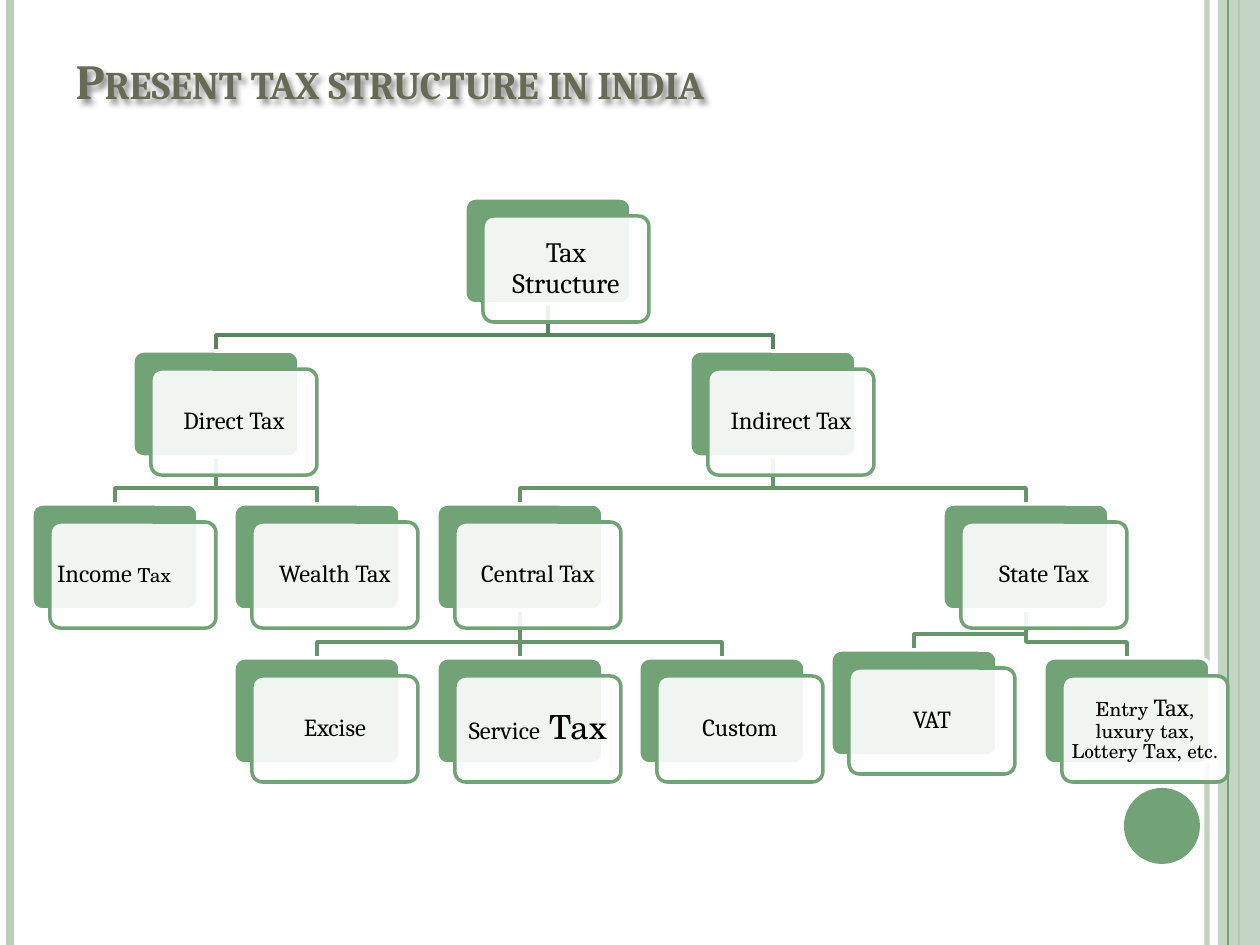
from dataclasses import dataclass

from lxml.etree import SubElement
from pptx import Presentation
from pptx.dml.color import RGBColor
from pptx.enum.shapes import MSO_CONNECTOR, MSO_SHAPE
from pptx.enum.text import MSO_ANCHOR, MSO_AUTO_SIZE, PP_ALIGN
from pptx.oxml.ns import qn
from pptx.util import Pt

PX = 914400 / 126


def px(length):
    return round(length * PX)


@dataclass(frozen=True)
class Theme:
    green: str = "72A376"
    pale: str = "BCCEBD"
    white: str = "FFFFFF"
    black: str = "000000"
    title: str = "676A55"
    first_branch: str = "5B835E"
    branch: str = "67946B"
    heading_font: str = "Cambria"
    accent_font: str = "TeX Gyre Schola"
    title_size: int = 28
    root_size: int = 16
    node_size: int = 14
    small_size: int = 11
    large_size: int = 19


THEME = Theme()
NODE_STYLE = (THEME.heading_font, THEME.node_size)
SMALL_STYLE = (THEME.accent_font, THEME.small_size)
LARGE_STYLE = (THEME.accent_font, THEME.large_size)

CARD_WIDTH, CARD_HEIGHT, CARD_SHIFT = 166, 106, 18
FIRST_LEFT, COLUMN_PITCH = 32, 202.4
FIRST_TOP, ROW_PITCH = 198, 153.2
BEND_ABOVE_CHILD = 16

# name: (column, row, runs)
NODES = {
    "root": (2.14, 0, [("Tax Structure", (THEME.heading_font, THEME.root_size))]),
    "direct": (0.5, 1, [("Direct Tax", NODE_STYLE)]),
    "income": (0, 2, [("Income", NODE_STYLE), (" Tax", SMALL_STYLE)]),
    "wealth": (1, 2, [("Wealth Tax", NODE_STYLE)]),
    "indirect": (3.25, 1, [("Indirect Tax", NODE_STYLE)]),
    "central": (2, 2, [("Central Tax", NODE_STYLE)]),
    "excise": (1, 3, [("Excise", NODE_STYLE)]),
    "service": (2, 3, [("Service", NODE_STYLE), (" Tax", LARGE_STYLE)]),
    "custom": (3, 3, [("Custom", NODE_STYLE)]),
    "state": (4.5, 2, [("State Tax", NODE_STYLE)]),
    "vat": (3.95, 2.95, [("VAT", NODE_STYLE)]),
    "entry": (5, 3, [("Entry ", SMALL_STYLE), ("Tax", NODE_STYLE),
                     (", luxury tax, Lottery Tax, etc.", SMALL_STYLE)]),
}
CHILDREN = {
    "state": ["entry", "vat"],
    "indirect": ["state", "central"],
    "central": ["custom", "service", "excise"],
    "root": ["indirect", "direct"],
    "direct": ["wealth", "income"],
}
LEFT_ALIGNED = {"income"}


def set_alpha(color_format_parent, percent):
    color = next(color_format_parent.iter(qn("a:srgbClr")))
    SubElement(color, qn("a:alpha")).set("val", str(percent * 1000))


class SlideBuilder:
    def __init__(self, slide, theme):
        self.slide = slide
        self.theme = theme

    def style_line(self, shape, color, points):
        shape.line.color.rgb = RGBColor.from_string(color)
        shape.line.width = Pt(points)

    def style_font(self, font, style, color):
        font.name, font.size = style[0], Pt(style[1])
        font.color.rgb = RGBColor.from_string(color)

    def title(self, text, left, top, width, height):
        title = self.slide.shapes.title
        title.left, title.top, title.width, title.height = map(px, (left, top, width, height))
        frame = title.text_frame
        frame.text = text
        frame.auto_size = MSO_AUTO_SIZE.NONE
        frame.vertical_anchor = MSO_ANCHOR.BOTTOM
        paragraph = frame.paragraphs[0]
        paragraph.alignment = PP_ALIGN.LEFT
        self.style_font(paragraph.font, (self.theme.heading_font, self.theme.title_size),
                        self.theme.title)
        paragraph.font.bold = True
        paragraph.runs[0]._r.get_or_add_rPr().set("cap", "small")
        effects = SubElement(title._element.spPr, qn("a:effectLst"))
        shadow = SubElement(effects, qn("a:outerShdw"),
                            blurRad="38100", dist="38100", dir="2700000")
        color = SubElement(shadow, qn("a:srgbClr"), val=self.theme.black)
        SubElement(color, qn("a:alpha"), val="43000")

    def shape(self, kind, left, top, width, height, fill, alpha=100):
        shape = self.slide.shapes.add_shape(kind, *map(px, (left, top, width, height)))
        shape.shadow.inherit = False
        shape.fill.solid()
        shape.fill.fore_color.rgb = RGBColor.from_string(fill)
        if alpha < 100:
            set_alpha(shape._element.spPr.find(qn("a:solidFill")), alpha)
        shape.line.fill.background()
        return shape

    def line(self, start, end, color, points, alpha=100):
        connector = self.slide.shapes.add_connector(
            MSO_CONNECTOR.STRAIGHT, *map(px, (*start, *end)))
        self.style_line(connector, color, points)
        if alpha < 100:
            set_alpha(connector._element.spPr.find(qn("a:ln")), alpha)
        SubElement(connector._element.spPr, qn("a:effectLst"))
        return connector

    def card(self, left, top, runs, alignment):
        """Draw a green card with a translucent text card over it; return the green one."""
        back = self.shape(MSO_SHAPE.ROUNDED_RECTANGLE, left, top,
                          CARD_WIDTH, CARD_HEIGHT, self.theme.green)
        front = self.shape(MSO_SHAPE.ROUNDED_RECTANGLE, left + CARD_SHIFT, top + CARD_SHIFT,
                           CARD_WIDTH, CARD_HEIGHT, self.theme.white, 90)
        for shape, color in ((back, self.theme.white), (front, self.theme.green)):
            shape.adjustments[0] = 0.1
            self.style_line(shape, color, 2)
        frame = front.text_frame
        frame.word_wrap = True
        frame.vertical_anchor = MSO_ANCHOR.MIDDLE
        frame.margin_left = frame.margin_right = px(4)
        frame.margin_top = frame.margin_bottom = px(4)
        paragraph = frame.paragraphs[0]
        paragraph.alignment = alignment
        paragraph.line_spacing = 0.9
        for text, style in runs:
            run = paragraph.add_run()
            run.text = text
            font = run.font if len(runs) > 1 else paragraph.font
            self.style_font(font, style, self.theme.black)
        return back

    def branch(self, parent, child, color, above):
        """Join two cards, keeping the line behind the element given as above."""
        parent_x = parent.left + parent.width // 2
        child_x = child.left + child.width // 2
        parent_y = parent.top + parent.height
        if parent_x == child_x:
            line = self.line((0, 0), (0, 0), color, 2)
            line.begin_connect(parent, 2)
            line.end_connect(child, 0)
        else:
            bend_y = child.top - px(BEND_ABOVE_CHILD)
            builder = self.slide.shapes.build_freeform(parent_x, parent_y)
            builder.add_line_segments(
                [(parent_x, bend_y), (child_x, bend_y), (child_x, child.top)], close=False)
            line = builder.convert_to_shape()
            line.shadow.inherit = False
            line.fill.background()
            self.style_line(line, color, 2)
        above.addprevious(line._element)


def main():
    presentation = Presentation()
    presentation.slide_width, presentation.slide_height = px(1260), px(945)
    slide = presentation.slides.add_slide(presentation.slide_layouts[5])
    builder = SlideBuilder(slide, THEME)

    def stripe(x, color, points, alpha=100):
        builder.line((x, 0), (x, 945), color, points, alpha)

    stripe(1207, THEME.pale, 3, 93)
    stripe(10, THEME.pale, 4.5)
    stripe(1239, THEME.green, 1.5)
    builder.shape(MSO_SHAPE.RECTANGLE, 1218, 0, 42, 945, THEME.pale, 87)
    stripe(1228, THEME.green, 0.75)
    builder.shape(MSO_SHAPE.OVAL, 1124, 788, 76, 76, THEME.green)
    builder.title("Present tax structure in india", 63, 32, 1029, 84)

    cards = {}
    for name, (column, row, runs) in NODES.items():
        alignment = PP_ALIGN.LEFT if name in LEFT_ALIGNED else PP_ALIGN.CENTER
        cards[name] = builder.card(round(FIRST_LEFT + column * COLUMN_PITCH),
                                   round(FIRST_TOP + row * ROW_PITCH), runs, alignment)
    for parent, children in CHILDREN.items():
        color = THEME.first_branch if parent == "root" else THEME.branch
        for child in children:
            builder.branch(cards[parent], cards[child], color, cards["root"]._element)
    presentation.save("out.pptx")


if __name__ == "__main__":
    main()
